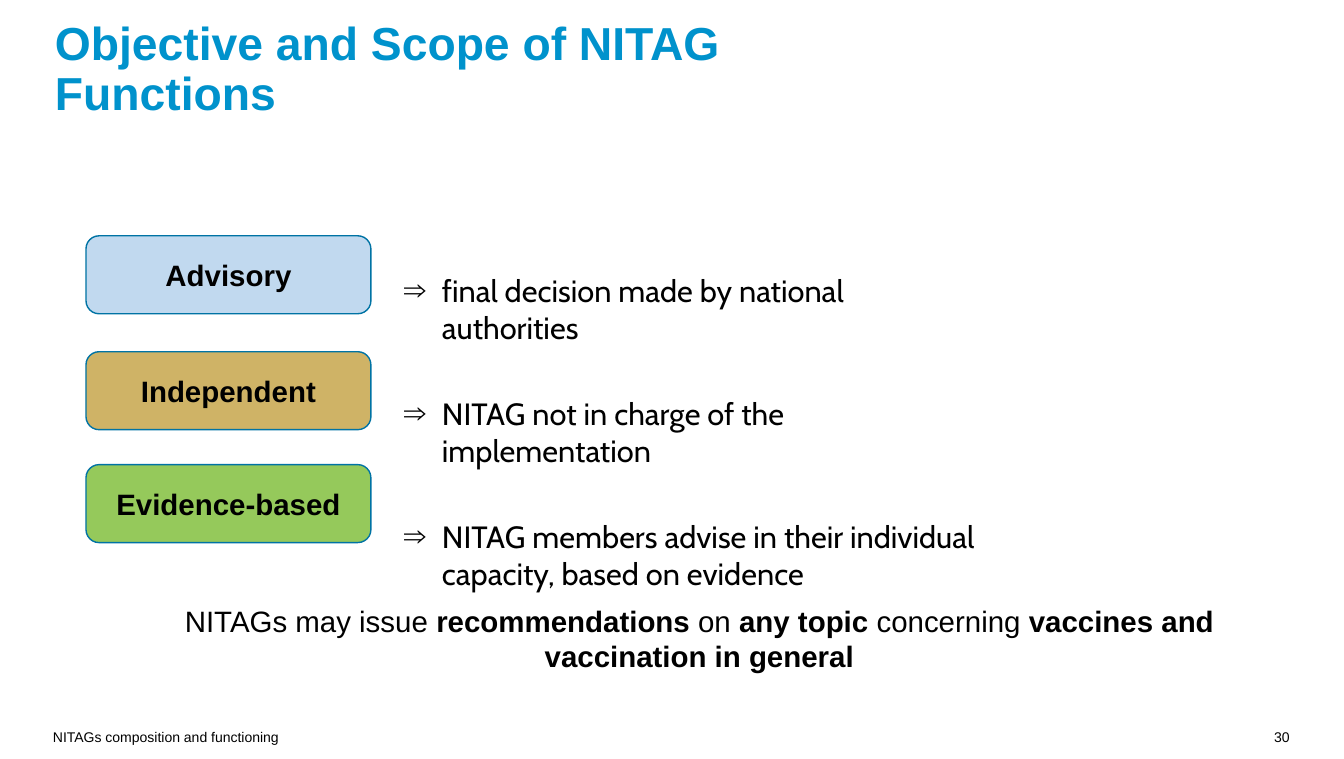
from dataclasses import dataclass

from lxml import etree
from pptx import Presentation
from pptx import util as u
from pptx.dml.color import RGBColor
from pptx.enum import shapes, text
from pptx.oxml.ns import qn

PX_PER_INCH = 101


@dataclass(frozen=True)
class Theme:
    heading_font: str = "Arial"
    bullet_font: str = "Cabin"
    ink: str = "000000"
    title: str = "0092CC"
    outline: str = "0073A4"
    advisory: str = "C1D9EF"
    independent: str = "CFB366"
    evidence: str = "95C95B"
    title_size: float = 33
    bullet_size: float = 21.9
    body_size: float = 21
    footer_size: float = 10


def px(length):
    return u.Emu(round(length * u.Inches(1) / PX_PER_INCH))


class SlideBuilder:
    def __init__(self, deck, theme):
        self.theme = theme
        self.slide = deck.slides.add_slide(deck.slide_layouts[5])

    def add_runs(self, paragraph, runs, size, font=None, color=None):
        for words, bold in runs:
            run = paragraph.add_run()
            run.text = words
            run.font.name = font or self.theme.heading_font
            run.font.size = u.Pt(size)
            run.font.bold = bold
            run.font.color.rgb = RGBColor.from_string(color or self.theme.ink)

    def set_frame(self, frame, insets, anchor):
        frame.word_wrap = True
        frame.auto_size = text.MSO_AUTO_SIZE.NONE
        frame.vertical_anchor = anchor
        (frame.margin_left, frame.margin_top,
         frame.margin_right, frame.margin_bottom) = map(px, insets)

    def title(self, words, left, top, width, height):
        heading = self.slide.shapes.title
        heading.left, heading.top = px(left), px(top)
        heading.width, heading.height = px(width), px(height)
        self.set_frame(heading.text_frame, (2, 0, 47, 0), text.MSO_ANCHOR.BOTTOM)
        paragraph = heading.text_frame.paragraphs[0]
        paragraph.alignment = text.PP_ALIGN.LEFT
        paragraph.line_spacing = 0.9
        self.add_runs(paragraph, [(words, True)], self.theme.title_size, color=self.theme.title)

    def text_box(self, left, top, width, height, insets):
        box = self.slide.shapes.add_textbox(px(left), px(top), px(width), px(height))
        self.set_frame(box.text_frame, insets, text.MSO_ANCHOR.TOP)
        return box.text_frame

    def label(self, runs, left, top, width, height, size, align, insets=(0, 0, 0, 0)):
        paragraph = self.text_box(left, top, width, height, insets).paragraphs[0]
        paragraph.alignment = align
        self.add_runs(paragraph, runs, size)

    def principle(self, words, color, left, top, width, height):
        card = self.slide.shapes.add_shape(
            shapes.MSO_SHAPE.ROUNDED_RECTANGLE, px(left), px(top), px(width), px(height))
        card.shadow.inherit = False
        card.fill.solid()
        card.fill.fore_color.rgb = RGBColor.from_string(color)
        card.line.color.rgb = RGBColor.from_string(self.theme.outline)
        card.line.width = u.Pt(1)
        self.set_frame(card.text_frame, (10, 5, 10, 5), text.MSO_ANCHOR.MIDDLE)
        paragraph = card.text_frame.paragraphs[0]
        paragraph.alignment = text.PP_ALIGN.CENTER
        self.add_runs(paragraph, [(words, True)], self.theme.body_size)

    def bullets(self, items, left, top, width, height, indent, gap):
        frame = self.text_box(left, top, width, height, (10, 5, 10, 5))
        for index, words in enumerate(items):
            paragraph = frame.add_paragraph() if index else frame.paragraphs[0]
            properties = paragraph._p.get_or_add_pPr()
            properties.set("marL", str(px(indent)))
            properties.set("indent", str(-px(indent)))
            etree.SubElement(properties, qn("a:buFont")).set("typeface", self.theme.heading_font)
            etree.SubElement(properties, qn("a:buChar")).set("char", "⇒")
            if index:
                paragraph.space_before = u.Pt(gap)
            self.add_runs(paragraph, [(words, False)], self.theme.bullet_size,
                          font=self.theme.bullet_font)


def main():
    theme = Theme()
    deck = Presentation()
    deck.slide_width, deck.slide_height = u.Inches(13.31), u.Inches(7.52)
    page = SlideBuilder(deck, theme)

    page.title("Objective and Scope of NITAG Functions", 53, 41, 940, 80)

    principles = [
        ("Advisory", theme.advisory, 236),
        ("Independent", theme.independent, 352),
        ("Evidence-based", theme.evidence, 465),
    ]
    for name, color, top in principles:
        page.principle(name, color, 86, top, 285, 78)

    page.bullets([
        "final decision made by national authorities",
        "NITAG not in charge of the implementation",
        "NITAG members advise in their individual capacity, based on evidence",
    ], 394, 267, 598, 330, indent=38, gap=35)

    page.label([
        ("NITAGs may issue ", False),
        ("recommendations", True),
        (" on ", False),
        ("any topic ", True),
        ("concerning ", False),
        ("vaccines and vaccination in general", True),
    ], 171, 598, 1057, 82, theme.body_size, text.PP_ALIGN.CENTER, (10, 5, 10, 5))

    page.label([("NITAGs composition and functioning", False)],
               53, 729, 249, 20, theme.footer_size, text.PP_ALIGN.LEFT)
    page.label([("30", False)], 1258, 729, 32, 20, theme.footer_size, text.PP_ALIGN.RIGHT)

    deck.save("out.pptx")


if __name__ == "__main__":
    main()
